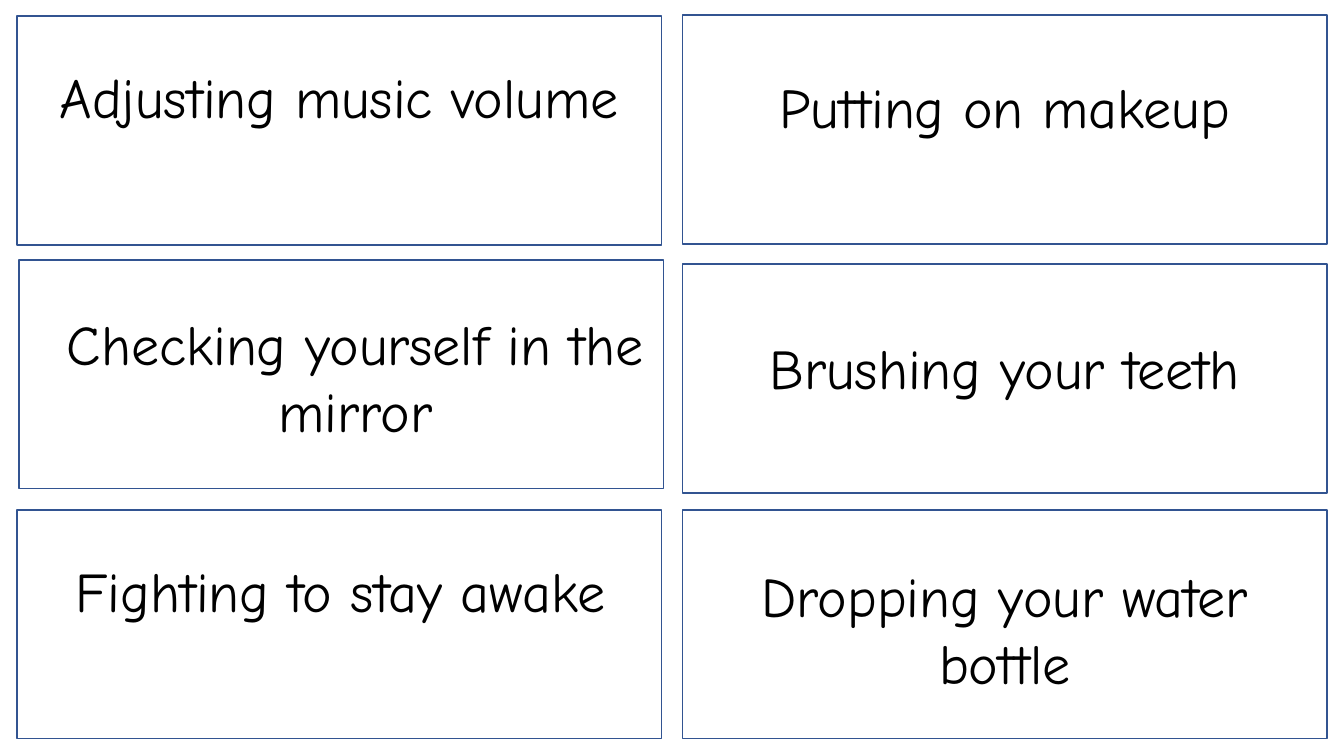
"""Build a slide of six cards, each naming one distracting activity."""
import pptx
import pptx.dml.color
import pptx.enum.shapes
import pptx.enum.text
import pptx.util

PX = 9144
WHITE = pptx.dml.color.RGBColor(0xFF, 0xFF, 0xFF)
BLACK = pptx.dml.color.RGBColor(0x00, 0x00, 0x00)
BLUE = pptx.dml.color.RGBColor(0x32, 0x54, 0x91)
CARD_W, CARD_H = 639, 227
LABEL_W = 609
FONT = {"name": "Comic Neue", "size": pptx.util.Pt(40)}
FRAME = {
    "word_wrap": True,
    "auto_size": pptx.enum.text.MSO_AUTO_SIZE.SHAPE_TO_FIT_TEXT,
    "vertical_anchor": pptx.enum.text.MSO_ANCHOR.TOP,
}

CARDS = [(17, 16), (677, 15), (19, 258), (677, 262), (17, 506), (677, 506)]
LABELS = [
    ("Adjusting music volume", 32, 57, 145),
    ("Putting on makeup", 692, 67, 77),
    ("Checking yourself in the mirror", 48, 302, 145),
    ("Brushing your teeth", 692, 326, 77),
    ("Fighting to stay awake", 33, 547, 77),
    ("Dropping your water bottle", 692, 552, 145),
]

prs = pptx.Presentation()
prs.slide_width, prs.slide_height = 1333 * PX, 750 * PX
s = prs.slides.add_slide(prs.slide_layouts[6])

for x, y in CARDS:
    sp = s.shapes.add_shape(pptx.enum.shapes.MSO_SHAPE.RECTANGLE,
                            x * PX, y * PX, CARD_W * PX, CARD_H * PX)
    sp.shadow.inherit = False
    sp.fill.solid()
    sp.fill.fore_color.rgb = WHITE
    sp.line.color.rgb = BLUE
    sp.line.width = pptx.util.Pt(1)

for text, x, y, h in LABELS:
    tf = s.shapes.add_textbox(x * PX, y * PX, LABEL_W * PX, h * PX).text_frame
    for key, value in FRAME.items():
        setattr(tf, key, value)
    p = tf.paragraphs[0]
    p.alignment = pptx.enum.text.PP_ALIGN.CENTER
    r = p.add_run()
    r.text = text
    for key, value in FONT.items():
        setattr(r.font, key, value)
    r.font.color.rgb = BLACK

prs.save("out.pptx")
